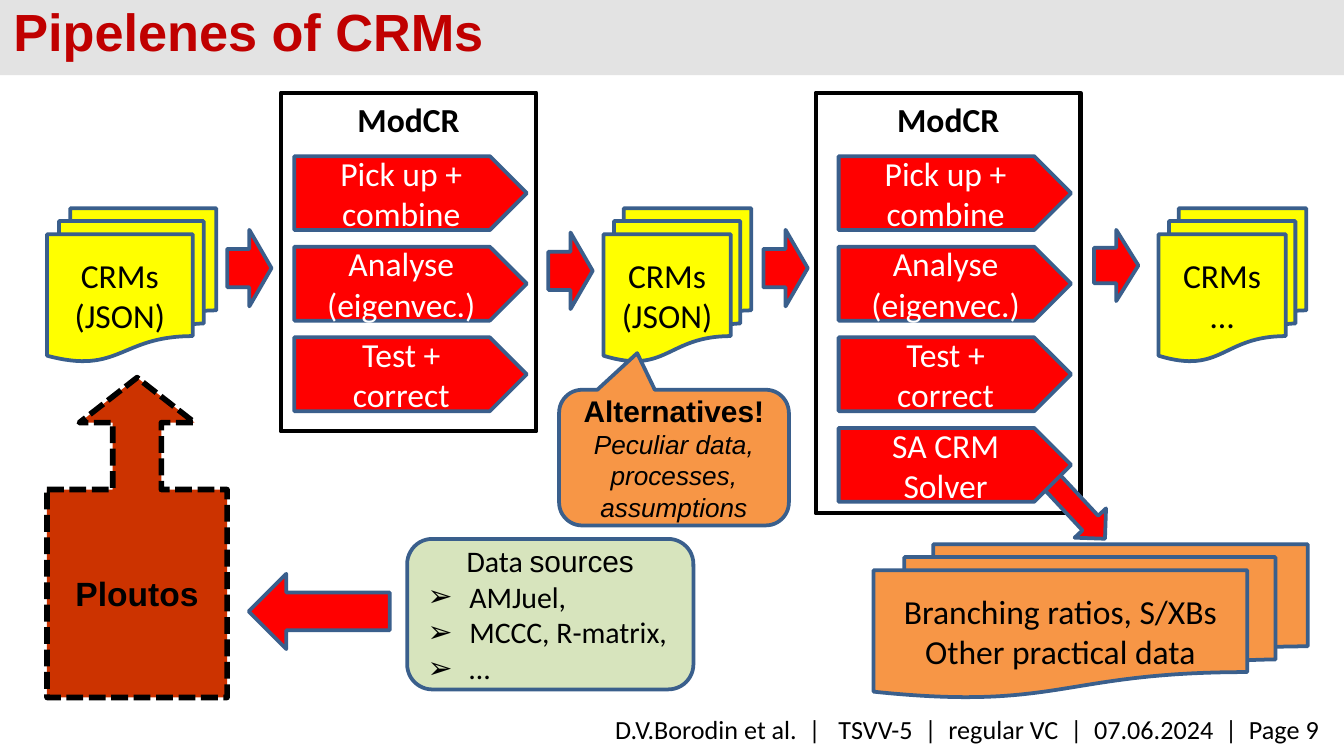
from dataclasses import dataclass
from typing import Any, NamedTuple, Optional

from lxml.etree import SubElement
from pptx import Presentation
from pptx.dml.color import RGBColor
from pptx.enum.dml import MSO_LINE
from pptx.enum.shapes import MSO_SHAPE
from pptx.enum.text import MSO_ANCHOR, PP_ALIGN
from pptx.oxml.ns import qn
from pptx.util import Inches, Pt

BLACK = RGBColor(0x00, 0x00, 0x00)
WHITE = RGBColor(0xFF, 0xFF, 0xFF)
GREY = RGBColor(0xE3, 0xE3, 0xE3)
DARK_RED = RGBColor(0xC0, 0x00, 0x00)
RED = RGBColor(0xFF, 0x00, 0x00)
BRICK = RGBColor(0xCC, 0x33, 0x00)
YELLOW = RGBColor(0xFF, 0xFF, 0x00)
GREEN = RGBColor(0xD7, 0xE4, 0xBD)
ORANGE = RGBColor(0xF7, 0x96, 0x46)
BLUE = RGBColor(0x3A, 0x5F, 0x8C)

WIDTH = Inches(10)
HEIGHT = WIDTH * 9 // 16
CELL = WIDTH / 100
STEP_TOP, STEP_PITCH = 11.62, 6.74

BODY = {"size": Pt(18), "name": "Calibri", "bold": False, "italic": False}
BOLD = BODY | {"bold": True}
SOURCE = BODY | {"size": Pt(16)}
SOURCE_ARIAL = SOURCE | {"name": "Arial"}
NOTE_HEAD = SOURCE_ARIAL | {"bold": True}
NOTE = SOURCE_ARIAL | {"size": Pt(14), "italic": True}


class Box(NamedTuple):
    col: float
    row: float
    cols: float
    rows: float


class Run(NamedTuple):
    text: str
    fmt: dict[str, Any] = BODY


@dataclass
class Para:
    runs: list[Run]
    bullet: bool = False
    align: PP_ALIGN = PP_ALIGN.CENTER


@dataclass
class Node:
    kind: MSO_SHAPE
    box: Box
    fill: Optional[RGBColor] = RED
    paras: tuple[Para, ...] = ()
    color: RGBColor = BLACK
    line: Optional[RGBColor] = BLUE
    weight: float = 2
    dash: Optional[MSO_LINE] = None
    adj: tuple[float, ...] = ()
    rotation: float = 0
    anchor: MSO_ANCHOR = MSO_ANCHOR.MIDDLE


def lines(*texts: str, fmt: dict[str, Any] = BODY) -> tuple[Para, ...]:
    return tuple(Para([Run(t, fmt)]) for t in texts)


def place(sp, box: Box) -> None:
    for name, value in zip(("left", "top", "width", "height"), box):
        setattr(sp, name, round(value * CELL))


def add_bullet(p) -> None:
    pPr = p._p.get_or_add_pPr()
    pPr.set("marL", str(Inches(0.31)))
    pPr.set("indent", str(-Inches(0.31)))
    SubElement(pPr, qn("a:buFont")).set("typeface", "Arial")
    SubElement(pPr, qn("a:buChar")).set("char", "➢")


def write(tf, paras: tuple[Para, ...], color: RGBColor) -> None:
    tf.word_wrap = True
    for i, para in enumerate(paras):
        p = tf.add_paragraph() if i else tf.paragraphs[0]
        p.alignment = para.align
        if para.bullet:
            add_bullet(p)
        for run in para.runs:
            for j, text in enumerate(run.text.split("\n")):
                if j:
                    p.add_line_break()
                if text:
                    r = p.add_run()
                    r.text = text
                    r.font.color.rgb = color
                    for name, value in run.fmt.items():
                        setattr(r.font, name, value)


def draw(s, node: Node):
    sp = s.shapes.add_shape(node.kind, 0, 0, 0, 0)
    place(sp, node.box)
    sp.shadow.inherit = False
    sp.rotation = node.rotation
    for i, value in enumerate(node.adj):
        sp.adjustments[i] = value
    if node.fill is None:
        sp.fill.background()
    else:
        sp.fill.solid()
        sp.fill.fore_color.rgb = node.fill
    if node.line is None:
        sp.line.fill.background()
    else:
        sp.line.color.rgb = node.line
        sp.line.width = Pt(node.weight)
        if node.dash is not None:
            sp.line.dash_style = node.dash
    sp.text_frame.vertical_anchor = node.anchor
    write(sp.text_frame, node.paras, node.color)
    return sp


def documents(box: Box, fill: RGBColor, *texts: str) -> Node:
    return Node(MSO_SHAPE.FLOWCHART_MULTIDOCUMENT, box, fill, lines(*texts))


def arrow(box: Box, rotation: float = 180) -> Node:
    return Node(MSO_SHAPE.LEFT_ARROW, box, rotation=rotation)


def panel(box: Box) -> Node:
    return Node(MSO_SHAPE.RECTANGLE, box, None, lines("ModCR", fmt=BOLD),
                line=BLACK, weight=2.25, anchor=MSO_ANCHOR.TOP)


def steps(col: float, labels: list[tuple[str, ...]]) -> list[Node]:
    return [Node(MSO_SHAPE.PENTAGON, Box(col, STEP_TOP + i * STEP_PITCH, 17.3, 5.5),
                 paras=lines(*label), color=WHITE)
            for i, label in enumerate(labels)]


def main() -> None:
    prs = Presentation()
    prs.slide_width, prs.slide_height = WIDTH, HEIGHT
    s = prs.slides.add_slide(prs.slide_layouts[5])

    band = draw(s, Node(MSO_SHAPE.RECTANGLE, Box(0, 0, 100, 5.6), GREY, line=None))
    s.shapes._spTree.insert(2, band._element)
    title = s.shapes.title
    place(title, Box(0, -0.6, 70.1, 5.7))
    heading = Run("Pipelenes of CRMs", BOLD | {"size": Pt(28), "name": "Arial"})
    write(title.text_frame, (Para([heading], align=PP_ALIGN.LEFT),), DARK_RED)

    footer = s.shapes.add_textbox(0, 0, 0, 0)
    place(footer, Box(19.3, 52.6, 79.9, 3.4))
    credit = Run("D.V.Borodin et al.  |   TSVV-5  |  regular VC  |  07.06.2024  |  Page 9",
                 BODY | {"size": Pt(14)})
    write(footer.text_frame, (Para([credit], align=PP_ALIGN.RIGHT),), BLACK)

    common = [("Pick up +", "combine"), ("Analyse (eigenvec.)",), ("Test +", "correct")]
    sources = (Para([Run("Data ", SOURCE), Run("sources", SOURCE_ARIAL)]),
               *(Para([Run(t, SOURCE)], True, PP_ALIGN.LEFT)
                 for t in ("AMJuel,", "MCCC, R-matrix,", "…")))
    note = Para([Run("Alternatives!\n", NOTE_HEAD),
                 Run("Peculiar data, processes, assumptions", NOTE)])

    nodes = [
        documents(Box(3.5, 15.5, 12.6, 11.4), YELLOW, "CRMs", "(JSON)"),
        Node(MSO_SHAPE.UP_ARROW_CALLOUT, Box(3.5, 28.1, 13.4, 23.8), BRICK,
             lines("Ploutos", fmt=BOLD | {"name": "Arial"}), line=BLACK, weight=3,
             dash=MSO_LINE.SQUARE_DOT, adj=(0.27, 0.32, 0.25, 0.65)),
        Node(MSO_SHAPE.ROUNDED_RECTANGLE, Box(30.3, 40.1, 21.3, 11.2), GREEN, sources),
        arrow(Box(18.5, 42.7, 10.5, 5.6), 0),
        panel(Box(20.9, 6.9, 19, 25.2)),
        panel(Box(60.7, 6.9, 19.7, 31.3)),
        *(arrow(Box(col, row, 3.3, rows)) for col, row, rows in (
            (16.9, 17.1, 5.7), (40.8, 17.3, 5.7), (56.8, 17.1, 5.7), (81.4, 17.1, 5.3))),
        arrow(Box(76.5, 36, 6.8, 3.2), 227),
        *steps(21.9, common),
        *steps(62.4, common + [("SA CRM\nSolver",)]),
        documents(Box(44.9, 15.5, 11, 11.4), YELLOW, "CRMs", "(JSON)"),
        documents(Box(86.2, 15.5, 11, 11.4), YELLOW, "CRMs", "…"),
        documents(Box(65, 40.5, 32.3, 11.4), ORANGE,
                  "Branching ratios, S/XBs", "Other practical data"),
        Node(MSO_SHAPE.ROUNDED_RECTANGULAR_CALLOUT, Box(41.6, 29, 17.1, 10.1), ORANGE,
             (note,), adj=(-0.16, -0.77, 0.17)),
    ]
    for node in nodes:
        draw(s, node)

    prs.save("out.pptx")


if __name__ == "__main__":
    main()
